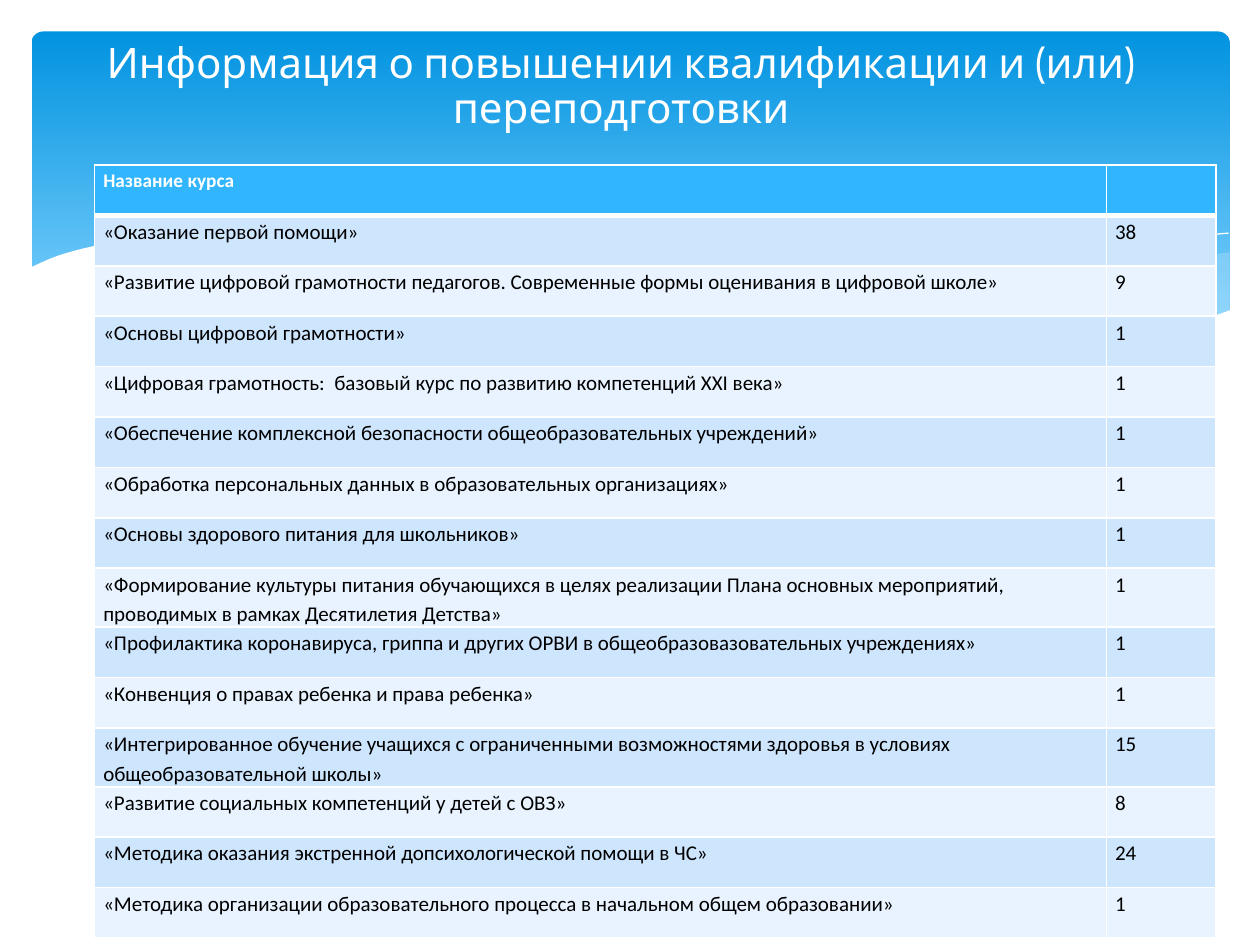
from dataclasses import dataclass

from lxml import etree
from pptx import Presentation
from pptx.dml.color import RGBColor
from pptx.enum.shapes import MSO_SHAPE
from pptx.enum.text import MSO_ANCHOR, MSO_AUTO_SIZE, PP_ALIGN
from pptx.oxml.ns import qn
from pptx.slide import Slide
from pptx.util import Inches, Pt

ROUNDED = MSO_SHAPE.ROUNDED_RECTANGLE
MIDDLE = MSO_ANCHOR.MIDDLE
NO_AUTOFIT = MSO_AUTO_SIZE.NONE
CENTER, LEFT = PP_ALIGN.CENTER, PP_ALIGN.LEFT

WHITE = RGBColor(0xFF, 0xFF, 0xFF)
BLACK = RGBColor(0, 0, 0)
SKY_TOP = RGBColor(0x02, 0x93, 0xE0)
SKY_BOTTOM = RGBColor(0x83, 0xD3, 0xFE)
WAVE = RGBColor(0xC6, 0xE7, 0xFC)
HEADER = RGBColor(0x31, 0xB6, 0xFD)
BANDS = (RGBColor(0xCE, 0xE5, 0xFE), RGBColor(0xE8, 0xF3, 0xFF))

TITLE = "Информация о повышении квалификации и (или) переподготовки"
COURSES = [
    ("Название курса", ""),
    ("«Оказание первой помощи»", "38"),
    ("«Развитие цифровой грамотности педагогов. Современные формы оценивания в цифровой школе»", "9"),
    ("«Основы цифровой грамотности»", "1"),
    ("«Цифровая грамотность:  базовый курс по развитию компетенций XXI века»", "1"),
    ("«Обеспечение комплексной безопасности общеобразовательных учреждений»", "1"),
    ("«Обработка персональных данных в образовательных организациях»", "1"),
    ("«Основы здорового питания для школьников»", "1"),
    ("«Формирование культуры питания обучающихся в целях реализации Плана основных мероприятий, "
     "проводимых в рамках Десятилетия Детства»", "1"),
    ("«Профилактика коронавируса, гриппа и других ОРВИ в общеобразовазовательных учреждениях»", "1"),
    ("«Конвенция о правах ребенка и права ребенка»", "1"),
    ("«Интегрированное обучение учащихся с ограниченными возможностями здоровья в условиях "
     "общеобразовательной школы»", "15"),
    ("«Развитие социальных компетенций у детей с ОВЗ»", "8"),
    ("«Методика оказания экстренной допсихологической помощи в ЧС»", "24"),
    ("«Методика организации образовательного процесса в начальном общем образовании»", "1"),
]
TALL_ROWS = (8, 11)

# Key points of the wave edges, in inches
RIGHT_WAVE_TOP = [(9.76, 2), (9.21, 2.1), (8.61, 2.23), (7.79, 2.42), (7.06, 2.57), (6.61, 2.65)]
RIGHT_WAVE_BOTTOM = [(6.61, 2.65), (7.19, 2.72), (7.69, 2.77), (8.14, 2.78), (8.63, 2.75),
                     (9.05, 2.69), (9.42, 2.59), (9.76, 2.47)]
MIDDLE_WAVE_TOP = [(8.93, 2.73), (8.07, 2.6), (7.06, 2.4), (6.29, 2.22), (5.55, 2.05),
                   (4.89, 1.94), (4.2, 1.87), (3.61, 1.85), (2.86, 1.91)]
MIDDLE_WAVE_BOTTOM = [(2.86, 1.91), (3.62, 2.03), (4.49, 2.22), (5.3, 2.4), (6.01, 2.55),
                      (6.8, 2.68), (7.48, 2.76), (8.18, 2.78), (8.93, 2.73)]
LONG_LINE = [(3.09, 1.95), (3.44, 1.9), (4.16, 1.87), (4.89, 1.9), (5.82, 2), (6.65, 2.13),
             (7.6, 2.33), (8.31, 2.51), (9.07, 2.72)]
SHORT_LINE = [(6.13, 2.57), (6.95, 2.35), (7.76, 2.16), (8.66, 1.99), (9.24, 1.9), (9.75, 1.85)]
PAPER_EDGE = [(9.77, 2.46), (9.3, 2.62), (8.75, 2.73), (8.09, 2.77), (7.44, 2.74), (6.68, 2.65),
              (5.79, 2.5), (5.03, 2.33), (4.18, 2.13), (3.4, 1.97), (2.71, 1.88), (2.11, 1.84),
              (1.61, 1.84), (1.19, 1.87), (0.76, 1.95), (0.46, 2.03), (0.23, 2.13)]


def smooth_curve(points, steps=4):
    """Return points on a Catmull-Rom curve through the given ones."""
    padded = [points[0], *points, points[-1]]
    curve = [points[0]]
    for quad in zip(padded, padded[1:], padded[2:], padded[3:]):
        for step in range(1, steps + 1):
            t = step / steps
            curve.append(tuple(
                (2 * b + (c - a) * t + (2 * a - 5 * b + 4 * c - d) * t**2
                 + (3 * b - a - 3 * c + d) * t**3) / 2
                for a, b, c, d in zip(*quad)))
    return curve


def write_text(frame, text, *, font, size, color, bold=False, align=LEFT, spacing=1.0):
    frame.word_wrap = True
    para = frame.paragraphs[0]
    para.alignment = align
    para.line_spacing = spacing
    span = para.add_run()
    span.text = text
    span.font.name = font
    span.font.size = Pt(size)
    span.font.bold = bold
    span.font.color.rgb = color


def add_border(cell, side, width):
    line = etree.SubElement(cell._tc.get_or_add_tcPr(), qn(f"a:ln{side}"), w=str(Pt(width)))
    fill = etree.SubElement(line, qn("a:solidFill"))
    etree.SubElement(fill, qn("a:srgbClr"), val=str(WHITE))


@dataclass
class SlideBuilder:
    page: Slide
    title_font: str = "Cabin"
    table_font: str = "Calibri"

    def sky(self, left, top, width, height):
        box = self.page.shapes.add_shape(ROUNDED, Inches(left), Inches(top),
                                         Inches(width), Inches(height))
        box.adjustments[0] = 0.034
        box.shadow.inherit = False
        box.line.fill.background()
        box.fill.gradient()
        box.fill.gradient_angle = 270
        for stop, color, position in zip(box.fill.gradient_stops, (SKY_TOP, SKY_BOTTOM), (0, 0.9)):
            stop.color.rgb = color
            stop.position = position

    def outline(self, points, closed):
        corners = [(Inches(x), Inches(y)) for x, y in points]
        builder = self.page.shapes.build_freeform(*corners[0])
        builder.add_line_segments(corners[1:], close=closed)
        shape = builder.convert_to_shape()
        shape.shadow.inherit = False
        return shape

    def area(self, points, color, opacity=100):
        shape = self.outline(points, closed=True)
        shape.line.fill.background()
        shape.fill.solid()
        shape.fill.fore_color.rgb = color
        if opacity < 100:
            tint = shape.element.spPr.find(".//" + qn("a:srgbClr"))
            etree.SubElement(tint, qn("a:alpha"), val=str(opacity * 1000))

    def curve(self, points):
        shape = self.outline(smooth_curve(points), closed=False)
        shape.fill.background()
        shape.line.color.rgb = WHITE
        shape.line.width = Pt(0)

    def table(self, rows, left, top, column_widths):
        heights = [0.42 if row in TALL_ROWS else 0.4 for row in range(len(rows))]
        table = self.page.shapes.add_table(
            len(rows), len(column_widths), Inches(left), Inches(top),
            Inches(sum(column_widths)), Inches(sum(heights))).table
        for column, width in zip(table.columns, column_widths):
            column.width = Inches(width)
        for index, texts in enumerate(rows):
            table.rows[index].height = Inches(heights[index])
            for cell, text in zip(table.rows[index].cells, texts):
                self.cell(cell, text, index)

    def cell(self, cell, text, row):
        is_header = row == 0
        cell.margin_left = cell.margin_right = Inches(0.07)
        cell.margin_top = cell.margin_bottom = 0
        widths = {"L": 1, "R": 1, "T": 3 if row == 1 else 1, "B": 3 if is_header else 1}
        for side, width in widths.items():
            add_border(cell, side, width)
        cell.fill.solid()
        cell.fill.fore_color.rgb = HEADER if is_header else BANDS[(row - 1) % 2]
        if text:
            write_text(cell.text_frame, text, font=self.table_font, size=11 if is_header else 12,
                       color=WHITE if is_header else BLACK, bold=is_header, spacing=1.15)

    def title(self, text, left, top, width, height):
        box = self.page.shapes.title
        box.left, box.top = Inches(left), Inches(top)
        box.width, box.height = Inches(width), Inches(height)
        frame = box.text_frame
        frame.auto_size = NO_AUTOFIT
        frame.vertical_anchor = MIDDLE
        frame.margin_bottom = Inches(0.45)
        write_text(frame, text, font=self.title_font, size=24, color=WHITE,
                   align=CENTER, spacing=0.9)
        box.element.getparent().append(box.element)  # bring to front


def main():
    deck = Presentation()
    deck.slide_width, deck.slide_height = Inches(10), Inches(7.5)
    slide = SlideBuilder(deck.slides.add_slide(deck.slide_layouts[5]))
    slide.sky(0.25, 0.25, 9.51, 2.7)
    slide.area(smooth_curve(RIGHT_WAVE_TOP) + smooth_curve(RIGHT_WAVE_BOTTOM), WAVE, opacity=29)
    slide.area(smooth_curve(MIDDLE_WAVE_TOP) + smooth_curve(MIDDLE_WAVE_BOTTOM), WAVE, opacity=40)
    slide.curve(LONG_LINE)
    slide.curve(SHORT_LINE)
    slide.area(smooth_curve(PAPER_EDGE) + [(0.23, 3.29), (9.77, 3.29)], WHITE)
    slide.table(COURSES, 0.75, 1.31, (8.03, 0.87))
    slide.title(TITLE, 0.43, 0.21, 9, 1.37)
    deck.save("out.pptx")


if __name__ == "__main__":
    main()
